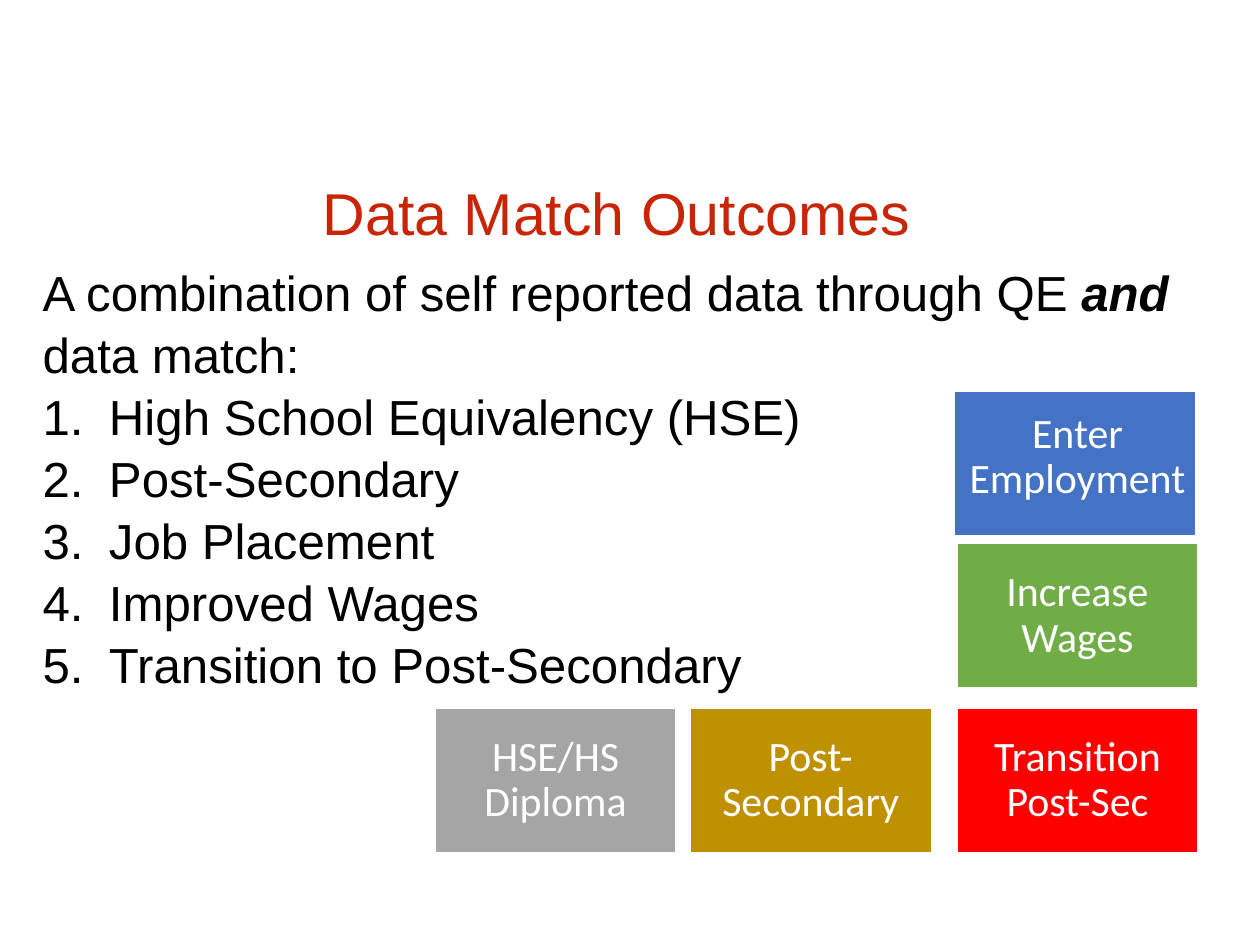
"""Builds the Data Match Outcomes slide."""
from lxml.etree import SubElement
from pptx import Presentation
from pptx.dml.color import RGBColor
from pptx.enum.shapes import MSO_SHAPE
from pptx.enum.text import MSO_ANCHOR, PP_ALIGN
from pptx.oxml.ns import qn
from pptx.util import Inches, Pt

WIDTH, HEIGHT = 14.22, 10.67
MARGIN = 0.4
TEXT_W = 13.12
TILE_W, TILE_H = 2.72, 1.63
COLS = (4.91, 7.79, 10.8)
ROWS = (4.35, 6.14, 8)
PAD = 0.14
OUTCOMES = ("High School Equivalency (HSE)", "Post-Secondary", "Job Placement",
            "Improved Wages", "Transition to Post-Secondary")
TILES = (
    ("HSE/HS Diploma", 0, 2, "A5A5A5", 0, 0),
    ("Post-Secondary", 1, 2, "BF9000", 0, 0),
    ("Enter Employment", 2, 0, "4472C4", -0.03, 0.07),
    ("Increase Wages", 2, 1, "70AD47", 0, 0),
    ("Transition Post-Sec", 2, 2, "FF0000", 0, 0),
)


def color(value):
    """Return the colour for a hex string."""
    return RGBColor.from_string(value)


def set_insets(tf, left, top, right, bottom):
    """Set the four inner margins of a text frame in inches."""
    tf.margin_left, tf.margin_top = Inches(left), Inches(top)
    tf.margin_right, tf.margin_bottom = Inches(right), Inches(bottom)


def style(p, size, name, value, spacing):
    """Set the font and line spacing of a paragraph's runs."""
    p.line_spacing = spacing
    for r in p.runs:
        r.font.size, r.font.name = Pt(size), name
        r.font.color.rgb = color(value)


def number(p, indent):
    """Turn a paragraph into a numbered item with a hanging indent."""
    pPr = p._p.get_or_add_pPr()
    pPr.set("marL", str(Inches(indent)))
    pPr.set("indent", str(-Inches(indent)))
    SubElement(pPr, qn("a:buFont"), typeface="Arial")
    SubElement(pPr, qn("a:buAutoNum"), type="arabicPeriod")


def add_text(s, top, height):
    """Add a full-width text box and return its text frame."""
    box = s.shapes.add_textbox(Inches(MARGIN), Inches(top), Inches(TEXT_W), Inches(height))
    tf = box.text_frame
    tf.word_wrap = True
    set_insets(tf, 0.08, 0.07, 0.08, 0.07)
    return tf


def add_title(s, text):
    """Add the centred slide title."""
    p = add_text(s, 1.88, 1.22).paragraphs[0]
    p.text = text
    p.alignment = PP_ALIGN.CENTER
    style(p, 48, "Arial", "C82506", 1.05)


def add_outcomes(s):
    """Add the introduction and the numbered outcomes."""
    tf = add_text(s, 2.86, 6.4)
    p = tf.paragraphs[0]
    p.text = "A combination of self reported data through QE "
    r = p.add_run()
    r.text = "and "
    r.font.bold = r.font.italic = True
    p.add_run().text = "data match:"
    for outcome in OUTCOMES:
        p = tf.add_paragraph()
        p.text = outcome
        number(p, 0.75)
    for p in tf.paragraphs:
        style(p, 40, "Arial", "000000", 1.05)


def add_tile(s, text, col, row, fill, dx, dy):
    """Add a tile moved by dx, dy whose text stays centred on its grid cell."""
    sp = s.shapes.add_shape(MSO_SHAPE.RECTANGLE, Inches(COLS[col] + dx),
                            Inches(ROWS[row] + dy), Inches(TILE_W), Inches(TILE_H))
    sp.shadow.inherit = False
    sp.fill.solid()
    sp.fill.fore_color.rgb = color(fill)
    sp.line.color.rgb = color("FFFFFF")
    sp.line.width = Pt(1)
    tf = sp.text_frame
    tf.word_wrap = True
    tf.vertical_anchor = MSO_ANCHOR.MIDDLE
    set_insets(tf, PAD - dx, PAD - dy, PAD + dx, PAD + dy)
    p = tf.paragraphs[0]
    p.text = text
    p.alignment = PP_ALIGN.CENTER
    style(p, 34, "Calibri", "FFFFFF", 0.9)


def main():
    """Build and save the slide."""
    prs = Presentation()
    prs.slide_width, prs.slide_height = Inches(WIDTH), Inches(HEIGHT)
    s = prs.slides.add_slide(prs.slide_layouts[6])
    add_title(s, "Data Match Outcomes")
    add_outcomes(s)
    for tile in TILES:
        add_tile(s, *tile)
    prs.save("out.pptx")


if __name__ == "__main__":
    main()
